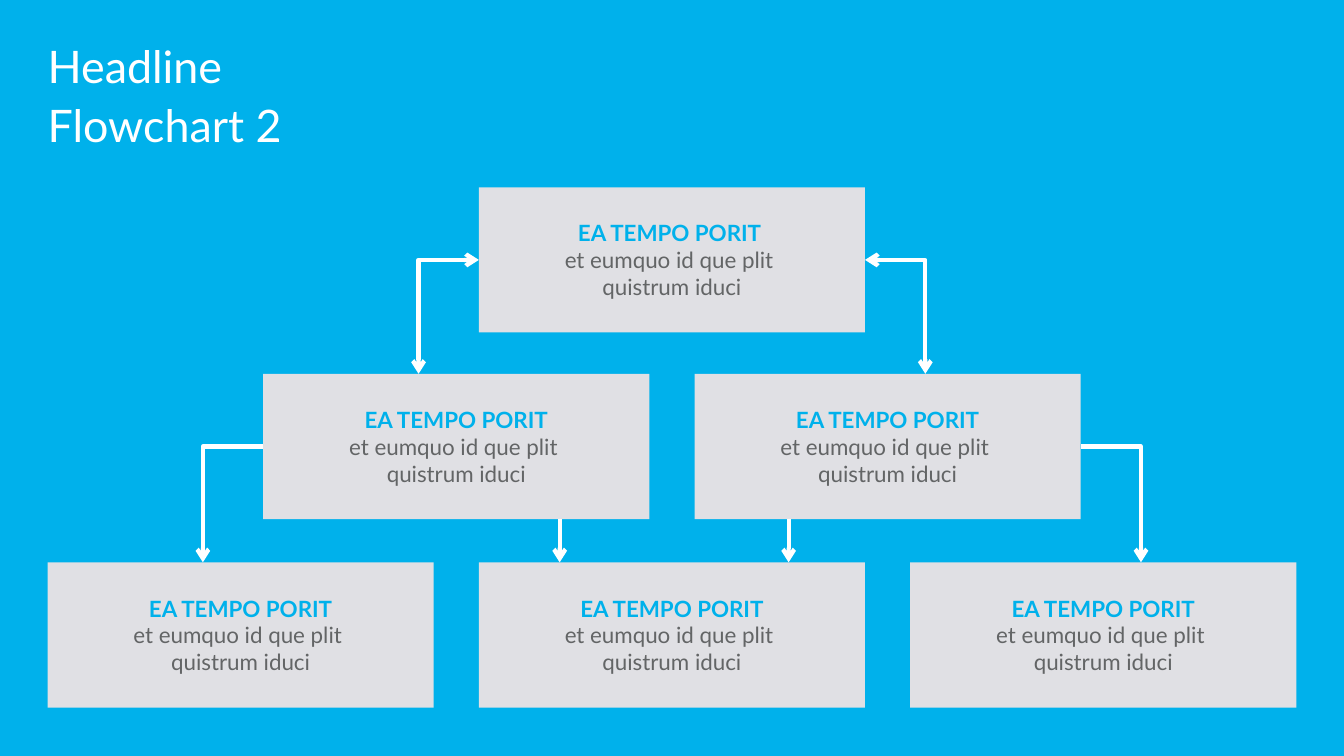
from lxml.etree import SubElement
from pptx import Presentation
from pptx.dml.color import RGBColor
from pptx.enum.shapes import MSO_CONNECTOR, MSO_SHAPE
from pptx.enum.text import MSO_ANCHOR, PP_ALIGN
from pptx.oxml.ns import qn
from pptx.util import Cm, Pt

BLUE = RGBColor(0x00, 0xB1, 0xEB)
WHITE = RGBColor(0xFF, 0xFF, 0xFF)
PALE = RGBColor(0xE0, 0xE0, 0xE4)
GREY = RGBColor(0x63, 0x65, 0x66)
FONT = "Lato"

WIDE, HIGH = Cm(33.87), Cm(19.05)
EDGE = Cm(1.2)
BOX_W, BOX_H = Cm(9.73), Cm(3.66)
STEP = BOX_W + Cm(1.14)
TOPS = Cm(4.72), Cm(9.42), Cm(14.17)
REACH = Cm(1.52)
LINE_H = Cm(1.3)


def add_title(slide, left, top, width):
    for row, words in enumerate(("Headline", "Flowchart 2")):
        box = slide.shapes.add_textbox(left, top + row * Cm(1.35), width, LINE_H)
        frame = box.text_frame
        frame.word_wrap = True
        frame.margin_left = frame.margin_right = 0
        frame.margin_top = frame.margin_bottom = 0
        para = frame.paragraphs[0]
        para.text = words
        para.line_spacing = 0.9 if row == 0 else 1.0
        para.font.name, para.font.size = FONT, Pt(32)
        para.font.color.rgb = WHITE


def add_box(slide, left, top, head="EA TEMPO PORIT"):
    box = slide.shapes.add_shape(MSO_SHAPE.RECTANGLE, left, top, BOX_W, BOX_H)
    box.shadow.inherit = False
    box.fill.solid()
    box.fill.fore_color.rgb = PALE
    box.line.fill.background()
    frame = box.text_frame
    frame.word_wrap = True
    frame.vertical_anchor = MSO_ANCHOR.MIDDLE
    para = frame.paragraphs[0]
    para.alignment = PP_ALIGN.CENTER
    para.font.name, para.font.size = FONT, Pt(16)
    lines = (head, BLUE), ("et eumquo id que plit ", GREY), ("quistrum iduci", GREY)
    for row, (words, color) in enumerate(lines):
        if row:
            para.add_line_break()
        run = para.add_run()
        run.text = words
        run.font.bold = row == 0
        run.font.color.rgb = color


def add_arrow(slide, start, end, both=False):
    bent = start[0] != end[0]
    kind = MSO_CONNECTOR.ELBOW if bent else MSO_CONNECTOR.STRAIGHT
    arrow = slide.shapes.add_connector(kind, *start, *end)
    arrow.line.color.rgb = WHITE
    arrow.line.width = Pt(3)
    props = arrow._element.spPr
    if bent:
        props.find(qn("a:prstGeom")).set("prst", "bentConnector2")
    line = props.find(qn("a:ln"))
    for tip in ("a:headEnd", "a:tailEnd") if both else ("a:tailEnd",):
        SubElement(line, qn(tip), type="arrow")
    SubElement(props, qn("a:effectLst"))


def add_elbows(slide, left, right, top, end, both=False):
    mid = top + BOX_H // 2
    add_arrow(slide, (left, mid), (left - REACH, end), both)
    add_arrow(slide, (right, mid), (right + REACH, end), both)


def add_chart(slide, left):
    first, second, third = TOPS
    peak = left + STEP
    pair = [left + STEP // 2, left + STEP * 3 // 2]
    add_box(slide, peak, first, "EA TEMPO PORIT ")
    for spot in pair:
        add_box(slide, spot, second)
    for col in range(3):
        add_box(slide, left + col * STEP, third)
    add_elbows(slide, peak, peak + BOX_W, first, second, True)
    add_elbows(slide, pair[0], pair[1] + BOX_W, second, third)
    for spot, shift in zip(pair, (Cm(7.47), Cm(2.37))):
        add_arrow(slide, (spot + shift, second + BOX_H), (spot + shift, third))


def main():
    deck = Presentation()
    deck.slide_width, deck.slide_height = WIDE, HIGH
    slide = deck.slides.add_slide(deck.slide_layouts[6])
    slide.background.fill.solid()
    slide.background.fill.fore_color.rgb = BLUE
    add_title(slide, EDGE, Cm(1.12), WIDE - 2 * EDGE)
    add_chart(slide, EDGE)
    deck.save("out.pptx")


if __name__ == "__main__":
    main()
